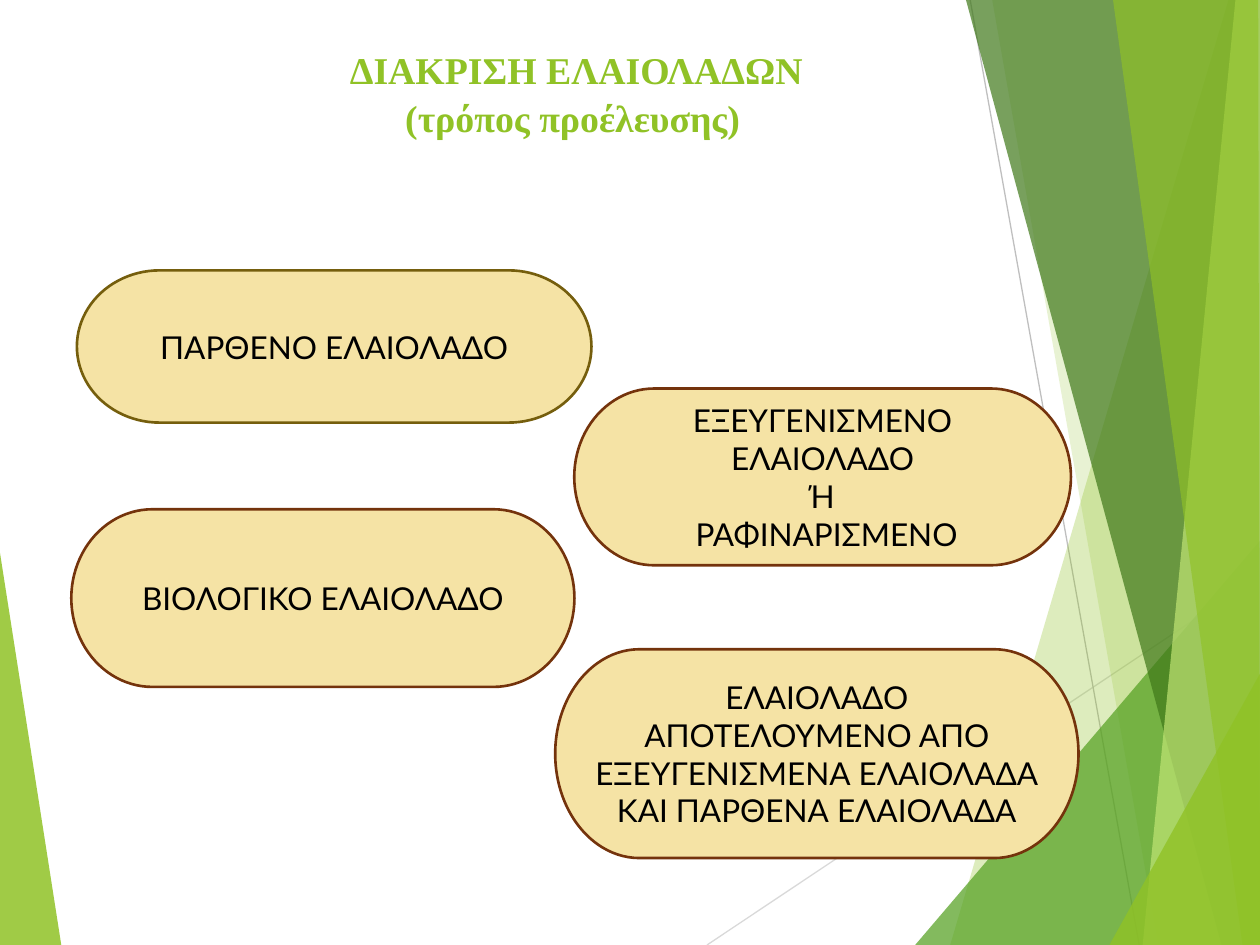
"""Build the slide on the kinds of olive oil by origin."""
from copy import deepcopy
from dataclasses import dataclass

from lxml.etree import SubElement
from pptx import Presentation
from pptx.dml.color import RGBColor
from pptx.enum.shapes import MSO_CONNECTOR as Connector, MSO_SHAPE as Preset
from pptx.enum.text import MSO_ANCHOR as Anchor, MSO_AUTO_SIZE as AutoSize, PP_ALIGN as Align
from pptx.oxml.ns import qn
from pptx.slide import Slide
from pptx.text.text import TextFrame
from pptx.util import Pt

Point = tuple[float, float]


@dataclass(frozen=True)
class Theme:
    lime: str = "90C226"
    green: str = "54A021"
    forest: str = "3F7819"
    pale: str = "C0E474"
    silver: str = "D9D9D9"
    grey: str = "BFBFBF"
    cream: str = "F5E3A5"
    olive: str = "755E0D"
    brown: str = "74330C"
    black: str = "000000"
    title_font: str = "Times New Roman"
    body_font: str = "Lato"
    title_size: float = 21.6
    body_size: float = 18
    hairline: float = 0.75
    outline: float = 1.5


THEME = Theme()


@dataclass(frozen=True)
class Facet:
    color: str
    opacity: int
    points: tuple[Point, ...]


@dataclass(frozen=True)
class Ray:
    start: Point
    end: Point
    color: str


@dataclass(frozen=True)
class Pill:
    left: float
    top: float
    width: float
    height: float
    text: str
    outline: str = THEME.brown


LEFT_FACET = Facet(THEME.lime, 85, ((0, 316), (35.3, 540), (0, 540)))
RAYS = (
    Ray((404, 540), (720, 329), THEME.silver),
    Ray((554.4, 0), (651, 540), THEME.grey),
)
RIGHT_FACETS = (
    Facet(THEME.lime, 30, ((702, 0), (543, 540), (720, 540), (720, 0))),
    Facet(THEME.lime, 20, ((567.4, 0), (661.7, 540), (720, 540), (720, 0))),
    Facet(THEME.green, 72, ((522.7, 540), (720, 309), (720, 540))),
    Facet(THEME.forest, 70, ((552.2, 0), (698.4, 540), (720, 540), (720, 0))),
    Facet(THEME.pale, 70, ((706.3, 0), (653, 540), (720, 540), (720, 0))),
    Facet(THEME.lime, 65, ((636, 0), (710, 540), (720, 540), (718.6, 0))),
    Facet(THEME.lime, 80, ((634.5, 540), (720, 385.2), (720, 540))),
)
TITLE = " ΔΙΑΚΡΙΣΗ ΕΛΑΙΟΛΑΔΩΝ \v(τρόπος προέλευσης) "
PILLS = (
    Pill(44, 154.5, 294, 87, "ΠΑΡΘΕΝΟ ΕΛΑΙΟΛΑΔΟ", THEME.olive),
    Pill(40.8, 291, 287.5, 101.5, "ΒΙΟΛΟΓΙΚΟ ΕΛΑΙΟΛΑΔΟ"),
    Pill(317.3, 371, 299, 119.3,
         "ΕΛΑΙΟΛΑΔΟ ΑΠΟΤΕΛΟΥΜΕΝΟ ΑΠΟ ΕΞΕΥΓΕΝΙΣΜΕΝΑ ΕΛΑΙΟΛΑΔΑ ΚΑΙ ΠΑΡΘΕΝΑ ΕΛΑΙΟΛΑΔΑ"),
    Pill(328.2, 222, 283.8, 101, "ΕΞΕΥΓΕΝΙΣΜΕΝΟ ΕΛΑΙΟΛΑΔΟ\nΉ\n ΡΑΦΙΝΑΡΙΣΜΕΝΟ"),
)


def write_text(frame: TextFrame, text: str, *, font: str, size: float, color: str,
               bold: bool = False, anchor: Anchor = Anchor.MIDDLE, spacing: float = 1) -> None:
    """Fill a text frame with centred text in one format."""
    frame.text = text
    frame.word_wrap = True
    frame.auto_size = AutoSize.NONE
    frame.vertical_anchor = anchor
    for paragraph in frame.paragraphs:
        paragraph.alignment = Align.CENTER
        paragraph.line_spacing = spacing
        for run in paragraph.runs:
            run.font.name = font
            run.font.size = Pt(size)
            run.font.bold = bold
            run.font.color.rgb = RGBColor.from_string(color)
        for line_break in paragraph._p.findall(qn("a:br")):
            line_break.insert(0, deepcopy(paragraph.runs[0]._r.rPr))


def draw_facet(slide: Slide, facet: Facet) -> None:
    """Draw one translucent polygon."""
    start, *others = facet.points
    builder = slide.shapes.build_freeform(*start, scale=Pt(1))
    builder.add_line_segments(others, close=True)
    shape = builder.convert_to_shape()
    shape.shadow.inherit = False
    shape.fill.solid()
    shape.fill.fore_color.rgb = RGBColor.from_string(facet.color)
    shape.line.fill.background()
    color = shape._element.spPr.find(qn("a:solidFill"))[0]
    SubElement(color, qn("a:alpha"), val=str(facet.opacity * 1000))


def draw_ray(slide: Slide, ray: Ray) -> None:
    """Draw one thin straight line."""
    ends = [Pt(value) for value in (*ray.start, *ray.end)]
    connector = slide.shapes.add_connector(Connector.STRAIGHT, *ends)
    connector.line.color.rgb = RGBColor.from_string(ray.color)
    connector.line.width = Pt(THEME.hairline)
    SubElement(connector._element.spPr, qn("a:effectLst"))


def draw_pill(slide: Slide, pill: Pill) -> None:
    """Draw one outlined terminator with its label."""
    box = [Pt(value) for value in (pill.left, pill.top, pill.width, pill.height)]
    shape = slide.shapes.add_shape(Preset.FLOWCHART_TERMINATOR, *box)
    shape.shadow.inherit = False
    shape.fill.solid()
    shape.fill.fore_color.rgb = RGBColor.from_string(THEME.cream)
    shape.line.color.rgb = RGBColor.from_string(pill.outline)
    shape.line.width = Pt(THEME.outline)
    write_text(shape.text_frame, pill.text, font=THEME.body_font,
               size=THEME.body_size, color=THEME.black)


def place_title(slide: Slide) -> None:
    """Format the title and bring it in front of the backdrop."""
    title = slide.shapes.title
    title.left, title.top, title.width, title.height = Pt(36), Pt(21.6), Pt(588), Pt(52)
    write_text(title.text_frame, TITLE, font=THEME.title_font, size=THEME.title_size,
               color=THEME.lime, bold=True, anchor=Anchor.TOP, spacing=1.06)
    slide.shapes._spTree.append(title._element)


def main() -> None:
    """Build and save the presentation."""
    presentation = Presentation()
    presentation.slide_width, presentation.slide_height = Pt(720), Pt(540)
    slide = presentation.slides.add_slide(presentation.slide_layouts.get_by_name("Title Only"))
    draw_facet(slide, LEFT_FACET)
    for ray in RAYS:
        draw_ray(slide, ray)
    for facet in RIGHT_FACETS:
        draw_facet(slide, facet)
    place_title(slide)
    for pill in PILLS:
        draw_pill(slide, pill)
    presentation.save("out.pptx")


if __name__ == "__main__":
    main()
